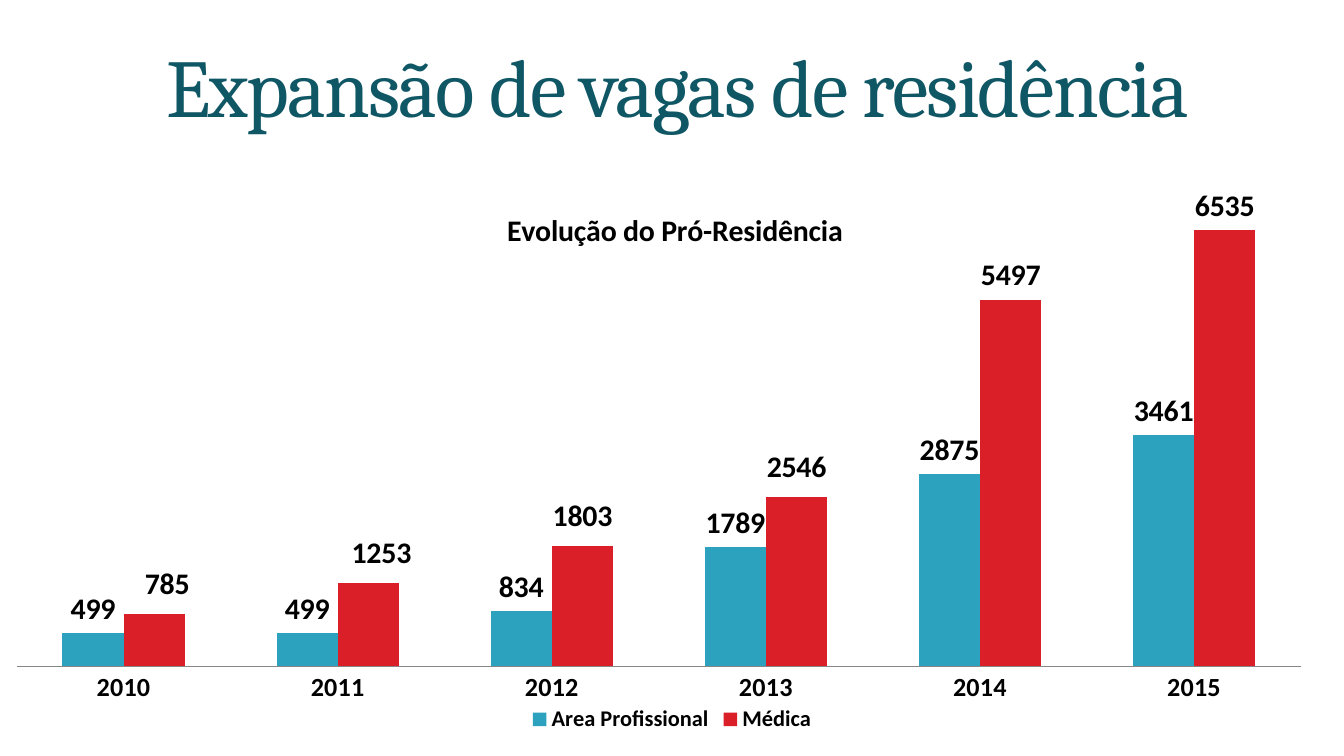
from lxml.etree import SubElement
from pptx import Presentation
from pptx.chart.data import CategoryChartData
from pptx.dml.color import RGBColor
from pptx.enum.chart import XL_CHART_TYPE as ChartType
from pptx.enum.chart import XL_LABEL_POSITION as LabelPosition
from pptx.enum.chart import XL_LEGEND_POSITION as LegendPosition
from pptx.enum.chart import XL_TICK_LABEL_POSITION as TickLabelPosition
from pptx.enum.chart import XL_TICK_MARK as TickMark
from pptx.enum.text import MSO_ANCHOR as Anchor
from pptx.enum.text import PP_ALIGN as Align
from pptx.oxml import parse_xml
from pptx.oxml.ns import nsdecls, qn
from pptx.util import Cm, Pt

TITLE = "Expansão de vagas de residência"
CHART_TITLE = "Evolução do Pró-Residência"
YEARS = ["2010", "2011", "2012", "2013", "2014", "2015"]
SERIES = [
    ("Area Profissional", [499, 499, 834, 1789, 2875, 3461], "teal"),
    ("Médica", [785, 1253, 1803, 2546, 5497, 6535], "red"),
]
LABEL_SHIFTS = [0.01, 0.01, 0, 0]
LABEL_RISE = -0.01
COLORS = {
    "title": "105766",
    "text": "000000",
    "teal": "2DA2BF",
    "red": "DA1F28",
    "axis": "868686",
}


def color(name):
    return RGBColor.from_string(COLORS[name])


def format_font(font, size, name="Calibri", bold=True, ink="text"):
    for key, value in {"size": Pt(size), "name": name, "bold": bold}.items():
        setattr(font, key, value)
    font.color.rgb = color(ink)


def manual_layout(**values):
    layout = parse_xml(f"<c:layout {nsdecls('c')}/>")
    manual = SubElement(layout, qn("c:manualLayout"))
    for key, value in values.items():
        SubElement(manual, qn(f"c:{key}")).set("val", str(value))
    return layout


def add_title(page):
    box = page.shapes.title
    place = {"left": Cm(0.71), "top": Cm(0.58), "width": Cm(24.2), "height": Cm(2.39)}
    for key, value in place.items():
        setattr(box, key, value)
    frame = box.text_frame
    frame.word_wrap = True
    frame.vertical_anchor = Anchor.MIDDLE
    for side in ("left", "top", "right", "bottom"):
        setattr(frame, f"margin_{side}", Cm(0.1))
    para = frame.paragraphs[0]
    para.alignment = Align.CENTER
    para.line_spacing = 0.8
    span = para.add_run()
    span.text = TITLE
    format_font(span.font, 44, "Cambria", False, "title")
    span.font._element.set("spc", "-100")


def format_axes(chart):
    years = chart.category_axis
    years.major_tick_mark = years.minor_tick_mark = TickMark.NONE
    years.tick_label_position = TickLabelPosition.NEXT_TO_AXIS
    years.has_major_gridlines = False
    years.format.line.color.rgb = color("axis")
    format_font(years.tick_labels.font, 14)
    years.tick_labels.offset = 0
    values = chart.value_axis
    values.visible = False
    values.has_major_gridlines = False
    values.minimum_scale = 0
    values.maximum_scale = 7000


def format_series(plot):
    plot.gap_width = 150
    plot.overlap = 0
    plot.vary_by_categories = False
    for series, (_, _, ink) in zip(plot.series, SERIES):
        series.format.fill.solid()
        series.format.fill.fore_color.rgb = color(ink)
        series.invert_if_negative = False
        labels = series.data_labels
        labels.show_value = True
        labels.position = LabelPosition.OUTSIDE_END
        format_font(labels.font, 16)
    medical = plot.series[1]
    for index in range(len(LABEL_SHIFTS)):
        label = medical.points[index].data_label
        format_font(label.font, 16)
        label.position = LabelPosition.OUTSIDE_END
    for shift, item in zip(LABEL_SHIFTS, medical._element.iter(qn("c:dLbl"))):
        item.find(qn("c:idx")).addnext(manual_layout(x=shift, y=LABEL_RISE))


def add_residency_chart(page):
    data = CategoryChartData()
    data.categories = YEARS
    for name, values, _ in SERIES:
        data.add_series(name, values)
    chart = page.shapes.add_chart(
        ChartType.COLUMN_CLUSTERED, Cm(0.3), Cm(3.56), Cm(24.79), Cm(10.39), data
    ).chart
    format_font(chart.font, 16)
    chart.has_title = True
    heading = chart.chart_title
    heading.include_in_layout = True
    heading.text_frame.text = CHART_TITLE
    format_font(heading.text_frame.paragraphs[0].runs[0].font, 16)
    title_node = heading._element
    for old in title_node.findall(qn("c:layout")):
        title_node.remove(old)
    title_node.find(qn("c:tx")).addnext(
        manual_layout(xMode="edge", yMode="edge", x=0.37, y=0.03)
    )
    chart.has_legend = True
    chart.legend.position = LegendPosition.BOTTOM
    chart.legend.include_in_layout = False
    format_font(chart.legend.font, 12)
    format_axes(chart)
    format_series(chart.plots[0])
    area = chart._chartSpace.chart.plotArea
    for old in area.findall(qn("c:layout")):
        area.remove(old)
    area.insert(0, manual_layout(
        layoutTarget="inner", xMode="edge", yMode="edge", x=0, y=0.02, w=0.98, h=0.85
    ))


def main():
    deck = Presentation()
    deck.slide_width = Cm(25.4)
    deck.slide_height = Cm(14.29)
    page = deck.slides.add_slide(deck.slide_layouts[5])
    add_residency_chart(page)
    add_title(page)
    deck.save("out.pptx")


if __name__ == "__main__":
    main()
